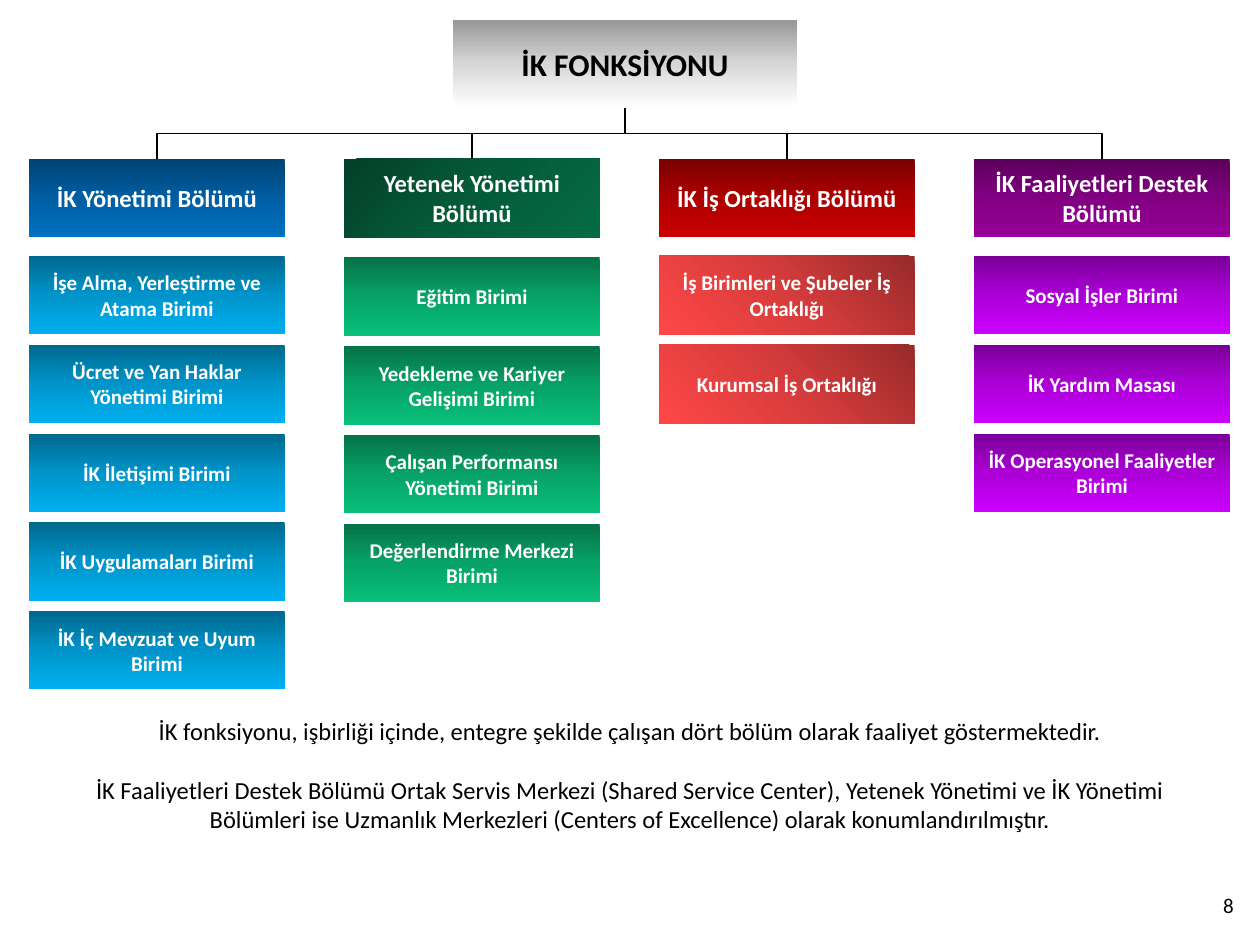
from dataclasses import dataclass

from lxml import etree
from pptx import Presentation
from pptx.dml.color import RGBColor
from pptx.enum.shapes import MSO_CONNECTOR, MSO_SHAPE
from pptx.enum.text import MSO_ANCHOR, MSO_AUTO_SIZE, PP_ALIGN
from pptx.oxml.ns import qn
from pptx.util import Cm, Pt

ELBOW = MSO_CONNECTOR.ELBOW
RECTANGLE = MSO_SHAPE.RECTANGLE
MIDDLE = MSO_ANCHOR.MIDDLE
NO_RESIZE = MSO_AUTO_SIZE.NONE
CENTER, LEFT = PP_ALIGN.CENTER, PP_ALIGN.LEFT
TITLE_ONLY = 5
BOTTOM_SITE, TOP_SITE = 2, 0


@dataclass(frozen=True)
class Gradient:
    start: str
    middle: str
    end: str
    angle: int = 90  # clockwise degrees


@dataclass(frozen=True)
class Theme:
    font: str = "Calibri"
    dark: str = "000000"
    light: str = "FFFFFF"
    title_size: int = 18
    department_size: int = 14
    unit_size: int = 12
    note_size: int = 14
    number_size: int = 12
    title_fill: Gradient = Gradient("979797", "D7D7D7", "FFFFFF")
    blue_head: Gradient = Gradient("004272", "005EA2", "0070C0")
    blue_unit: Gradient = Gradient("00688E", "0094CA", "00B0F0")
    green_head: Gradient = Gradient("034029", "045B3A", "046C45", 45)
    green_unit: Gradient = Gradient("057248", "07A267", "08C07A")
    red_head: Gradient = Gradient("790000", "AC0000", "CC0000")
    red_unit: Gradient = Gradient("972A2A", "D73C3C", "FF4747", 135)
    purple_head: Gradient = Gradient("5B005B", "810081", "990099")
    purple_unit: Gradient = Gradient("790097", "AC00D7", "CC00FF")


THEME = Theme()


@dataclass(frozen=True)
class Department:
    name: str
    head_fill: Gradient
    unit_fill: Gradient
    units: tuple[str, ...]
    first_unit_top: float = 5.16


DEPARTMENTS = (
    Department("İK Yönetimi Bölümü", THEME.blue_head, THEME.blue_unit,
               ("İşe Alma, Yerleştirme ve Atama Birimi",
                "Ücret ve Yan Haklar Yönetimi Birimi",
                "İK İletişimi Birimi",
                "İK Uygulamaları Birimi",
                "İK İç Mevzuat ve Uyum Birimi")),
    Department("Yetenek Yönetimi Bölümü", THEME.green_head, THEME.green_unit,
               ("Eğitim Birimi",
                "Yedekleme ve Kariyer Gelişimi Birimi",
                "Çalışan Performansı Yönetimi Birimi",
                "Değerlendirme Merkezi Birimi"), 5.19),
    Department("İK İş Ortaklığı Bölümü", THEME.red_head, THEME.red_unit,
               ("İş Birimleri ve Şubeler İş Ortaklığı",
                "Kurumsal İş Ortaklığı")),
    Department("İK Faaliyetleri Destek Bölümü", THEME.purple_head, THEME.purple_unit,
               ("Sosyal İşler Birimi",
                "İK Yardım Masası",
                "İK Operasyonel Faaliyetler Birimi")),
)

NOTES = (
    "İK fonksiyonu, işbirliği içinde, entegre şekilde çalışan dört bölüm olarak "
    "faaliyet göstermektedir.",
    "İK Faaliyetleri Destek Bölümü Ortak Servis Merkezi (Shared Service Center), "
    "Yetenek Yönetimi ve İK Yönetimi Bölümleri ise Uzmanlık Merkezleri "
    "(Centers of Excellence) olarak konumlandırılmıştır.",
)

# Grid in centimetres
FIRST_LEFT, COLUMN_STEP = 0.59, 6.35
BOX_WIDTH, BOX_HEIGHT = 5.15, 1.58
HEAD_TOP, UNIT_STEP = 3.2, 1.79


def write_text(shape, *texts: str, size: int, color: str, bold: bool = False,
               align=CENTER, wrap: bool = True, gap: int = 0) -> None:
    """Put one paragraph per text, with gap points between paragraphs."""
    frame = shape.text_frame
    frame.word_wrap = wrap
    for index, text in enumerate(texts):
        para = frame.add_paragraph() if index else frame.paragraphs[0]
        para.alignment = align
        if index:
            para.space_before = Pt(gap)
        span = para.add_run()
        span.text = text
        span.font.name = THEME.font
        span.font.size = Pt(size)
        span.font.bold = bold
        span.font.color.rgb = RGBColor.from_string(color)


def fill_gradient(shape, gradient: Gradient) -> None:
    shape.fill.gradient()
    shape.fill.gradient_angle = 360 - gradient.angle
    stops = shape.element.spPr.find(qn("a:gradFill")).find(qn("a:gsLst"))
    for stop in list(stops):
        stops.remove(stop)
    colors = (gradient.start, gradient.middle, gradient.end)
    for position, color in zip((0, 50000, 100000), colors):
        stop = etree.SubElement(stops, qn("a:gs"), pos=str(position))
        etree.SubElement(stop, qn("a:srgbClr"), val=color)


def add_box(page, text: str, left: float, top: float, gradient: Gradient, size: int):
    box = page.shapes.add_shape(RECTANGLE, Cm(left), Cm(top), Cm(BOX_WIDTH), Cm(BOX_HEIGHT))
    box.shadow.inherit = False
    box.line.fill.background()
    fill_gradient(box, gradient)
    box.text_frame.vertical_anchor = MIDDLE
    write_text(box, text, size=size, color=THEME.light, bold=True)
    return box


def connect_down(page, parent, child) -> None:
    """Elbow from the parent's bottom to the child's top, turned to run vertically."""
    start_x, start_y = parent.left + parent.width // 2, parent.top + parent.height
    end_x, end_y = child.left + child.width // 2, child.top
    drop, run = end_y - start_y, abs(end_x - start_x)
    line = page.shapes.add_connector(ELBOW, start_x, start_y, end_x, end_y)
    line.begin_connect(parent, BOTTOM_SITE)
    line.end_connect(child, TOP_SITE)
    line.left, line.top = (start_x + end_x - drop) // 2, (start_y + end_y - run) // 2
    line.width, line.height = drop, run
    goes_right = end_x > start_x
    frame = line.element.spPr.get_or_add_xfrm()
    frame.rot = 270 if goes_right else 90
    frame.flipH, frame.flipV = goes_right, False
    line.line.color.rgb = RGBColor.from_string(THEME.dark)
    line.line.width = Pt(1)
    etree.SubElement(line.element.spPr, qn("a:effectLst"))


def add_title(page):
    title = page.shapes.title
    title.left, title.top, title.width, title.height = Cm(9.13), Cm(0.4), Cm(6.94), Cm(1.78)
    fill_gradient(title, THEME.title_fill)
    title.text_frame.auto_size = NO_RESIZE
    title.text_frame.vertical_anchor = MIDDLE
    write_text(title, "İK FONKSİYONU", size=THEME.title_size, color=THEME.dark, bold=True)
    return title


def main() -> None:
    deck = Presentation()
    deck.slide_width, deck.slide_height = Cm(25.4), Cm(19.05)
    page = deck.slides.add_slide(deck.slide_layouts[TITLE_ONLY])
    title = add_title(page)

    # Departments with their units
    for column, department in enumerate(DEPARTMENTS):
        left = FIRST_LEFT + column * COLUMN_STEP
        head = add_box(page, department.name, left, HEAD_TOP,
                       department.head_fill, THEME.department_size)
        connect_down(page, title, head)
        for row, unit in enumerate(department.units):
            add_box(page, unit, left, department.first_unit_top + row * UNIT_STEP,
                    department.unit_fill, THEME.unit_size)

    # Explanation below the chart
    notes = page.shapes.add_textbox(Cm(0.79), Cm(14.3), Cm(23.83), Cm(2.64))
    write_text(notes, *NOTES, size=THEME.note_size, color=THEME.dark, gap=17)

    # Page number
    number = page.shapes.add_textbox(Cm(24.41), Cm(17.86), Cm(0.74), Cm(0.76))
    write_text(number, "8", size=THEME.number_size, color=THEME.dark, align=LEFT, wrap=False)

    deck.save("out.pptx")


if __name__ == "__main__":
    main()
